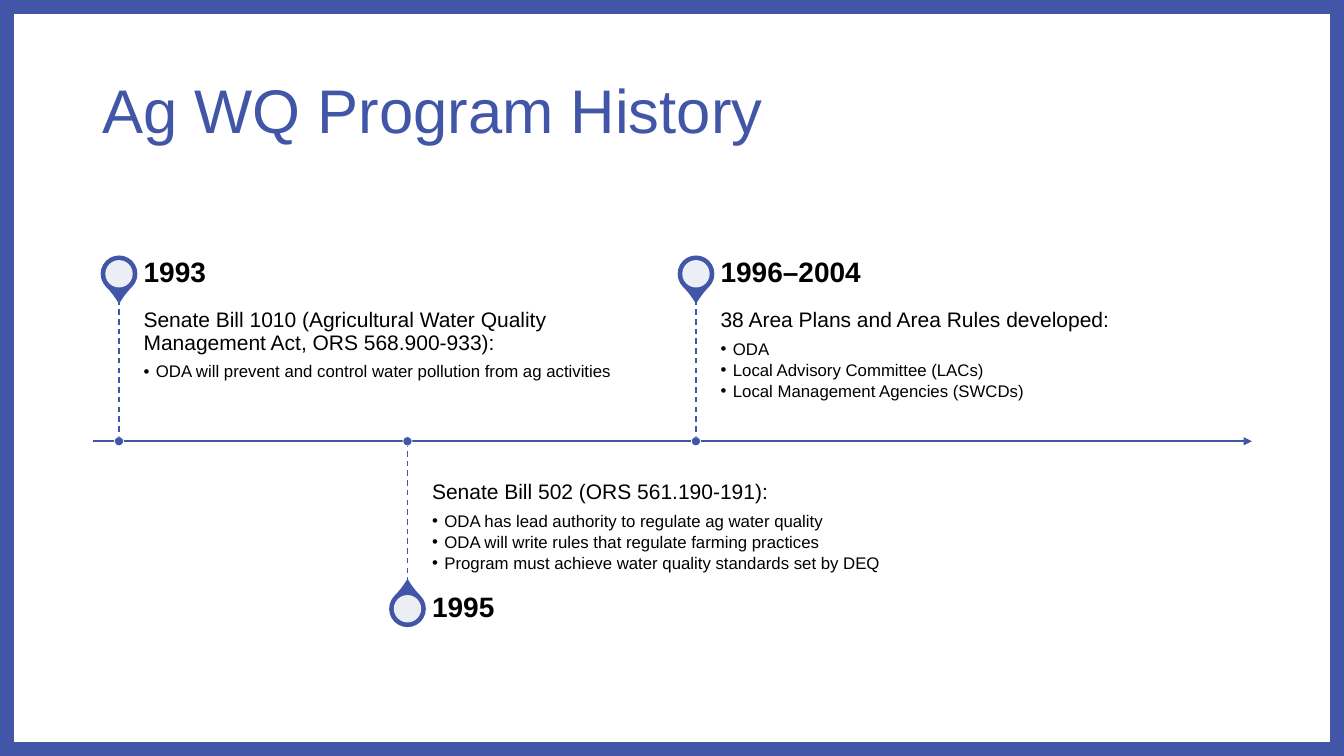
from dataclasses import dataclass

from lxml import etree
from pptx import Presentation
from pptx import util as u
from pptx.dml.color import RGBColor
from pptx.enum import dml, shapes, text
from pptx.oxml import ns

Cm, Pt = u.Cm, u.Pt


@dataclass(frozen=True)
class Theme:
    font: str = "Arial"
    blue: RGBColor = RGBColor(0x41, 0x56, 0xA6)
    white: RGBColor = RGBColor(0xFF, 0xFF, 0xFF)
    black: RGBColor = RGBColor(0, 0, 0)
    title: int = 44
    date: int = 20
    heading: int = 15
    bullet: int = 12


THEME = Theme()

# Timeline geometry in centimetres
AXIS_Y, AXIS_LEFT, AXIS_RIGHT = 11.12, 2.34, 31.55
FIRST_X, STEP_X = 3, 7.27
STEM, PIN_OFFSET = 3.57, 4.22
TEXT_GAP, TEXT_WIDTH, DATE_HEIGHT = 0.62, 12.12, 1.25

# Date, heading, bullets; events alternate above and below the axis
EVENTS = [
    ("1993",
     "Senate Bill 1010 (Agricultural Water Quality Management Act, ORS 568.900-933):",
     ["ODA will prevent and control water pollution from ag activities"]),
    ("1995",
     "Senate Bill 502 (ORS 561.190-191):",
     ["ODA has lead authority to regulate ag water quality",
      "ODA will write rules that regulate farming practices",
      "Program must achieve water quality standards set by DEQ"]),
    ("1996–2004",
     "38 Area Plans and Area Rules developed:",
     ["ODA", "Local Advisory Committee (LACs)", "Local Management Agencies (SWCDs)"]),
]


def add_child(parent, tag, **attributes):
    return etree.SubElement(parent, ns.qn(tag), attributes)


def add_text_frame(slide, left, top, width, height, anchor, insets):
    frame = slide.shapes.add_textbox(Cm(left), Cm(top), Cm(width), Cm(height)).text_frame
    frame.word_wrap = True
    frame.vertical_anchor = anchor
    frame.margin_left, frame.margin_top, frame.margin_right, frame.margin_bottom = map(Cm, insets)
    return frame


def write(paragraph, words, size, color=THEME.black, bold=False, after=0, bullet=False):
    paragraph.text = words
    if bullet:
        properties = paragraph._p.get_or_add_pPr()
        properties.set("marL", str(Cm(0.31)))
        properties.set("indent", str(Cm(-0.31)))
        add_child(properties, "a:buFont", typeface=THEME.font)
        add_child(properties, "a:buChar", char="•")
    paragraph.line_spacing = 0.9
    paragraph.space_after = Pt(after)
    font = paragraph.font
    font.name, font.size, font.bold = THEME.font, Pt(size), bold
    font.color.rgb = color


def add_line(slide, start, end, width, dashed=False, arrow=False):
    connector = slide.shapes.add_connector(
        shapes.MSO_CONNECTOR.STRAIGHT, *map(Cm, start + end))
    connector.line.color.rgb = THEME.blue
    connector.line.width = Pt(width)
    if dashed:
        connector.line.dash_style = dml.MSO_LINE.DASH
    if arrow:
        add_child(connector.line._ln, "a:tailEnd", type="triangle")
    add_child(connector._element.spPr, "a:effectLst")


def add_marker(slide, kind, x, y, size, fill, line=None, width=1):
    """Place a filled shape centred on (x, y)."""
    shape = slide.shapes.add_shape(
        kind, Cm(x - size / 2), Cm(y - size / 2), Cm(size), Cm(size))
    shape.shadow.inherit = False
    shape.fill.solid()
    shape.fill.fore_color.rgb = fill
    if line is None:
        shape.line.fill.background()
    else:
        shape.line.color.rgb = line
        shape.line.width = Pt(width)
    return shape


def add_pin(slide, x, y, rotation):
    drop = add_marker(slide, shapes.MSO_SHAPE.TEAR, x, y, 0.89, THEME.blue, THEME.blue)
    drop.adjustments[0] = 1.15
    drop.rotation = rotation
    eye = add_marker(slide, shapes.MSO_SHAPE.OVAL, x, y, 0.69, THEME.white)
    color = eye._element.spPr.find(ns.qn("a:solidFill"))[0]
    add_child(color, "a:alpha", val="90000")


def add_event(slide, x, above, date, heading, bullets):
    side = -1 if above else 1
    pin_y = AXIS_Y + side * PIN_OFFSET
    text_left = x + TEXT_GAP
    add_pin(slide, x, pin_y, 135 if above else 315)

    # Description between the axis and the date
    if above:
        top, anchor, insets = AXIS_Y - STEM, text.MSO_ANCHOR.TOP, (0, 0.25, 0.25, 0.41)
    else:
        top, anchor, insets = AXIS_Y, text.MSO_ANCHOR.BOTTOM, (0, 0.41, 0, 0.25)
    frame = add_text_frame(slide, text_left, top, TEXT_WIDTH, STEM, anchor, insets)
    write(frame.paragraphs[0], heading, THEME.heading, after=6)
    for words in bullets:
        write(frame.add_paragraph(), words, THEME.bullet, after=2, bullet=True)

    # Date beside the pin
    frame = add_text_frame(slide, text_left, pin_y - DATE_HEIGHT / 2, TEXT_WIDTH,
                           DATE_HEIGHT, text.MSO_ANCHOR.MIDDLE, (0, 0, 0.36, 0))
    write(frame.paragraphs[0], date, THEME.date, bold=True)

    # Stem and its dot on the axis
    ends = sorted([AXIS_Y, AXIS_Y + side * STEM])
    add_line(slide, (x, ends[0]), (x, ends[1]), 1, dashed=True)
    add_marker(slide, shapes.MSO_SHAPE.OVAL, x, AXIS_Y, 0.23, THEME.blue, THEME.white, 0.5)


def add_border(slide, width, height):
    border = slide.shapes.add_shape(shapes.MSO_SHAPE.RECTANGLE, 0, 0, width, height)
    border.shadow.inherit = False
    border.fill.background()
    border.line.color.rgb = THEME.blue
    border.line.width = Pt(20)


def main():
    presentation = Presentation()
    presentation.slide_width, presentation.slide_height = Cm(33.87), Cm(19.05)
    slide = presentation.slides.add_slide(presentation.slide_layouts[6])
    add_border(slide, presentation.slide_width, presentation.slide_height)

    # Title
    frame = add_text_frame(slide, 2.33, 1.01, 29.21, 3.68,
                           text.MSO_ANCHOR.MIDDLE, (0.25, 0.13, 0.25, 0.13))
    write(frame.paragraphs[0], "Ag WQ Program History", THEME.title, THEME.blue)

    # Timeline
    add_line(slide, (AXIS_LEFT, AXIS_Y), (AXIS_RIGHT, AXIS_Y), 1.5, arrow=True)
    for index, event in enumerate(EVENTS):
        add_event(slide, FIRST_X + index * STEP_X, index % 2 == 0, *event)

    presentation.save("out.pptx")


if __name__ == "__main__":
    main()
